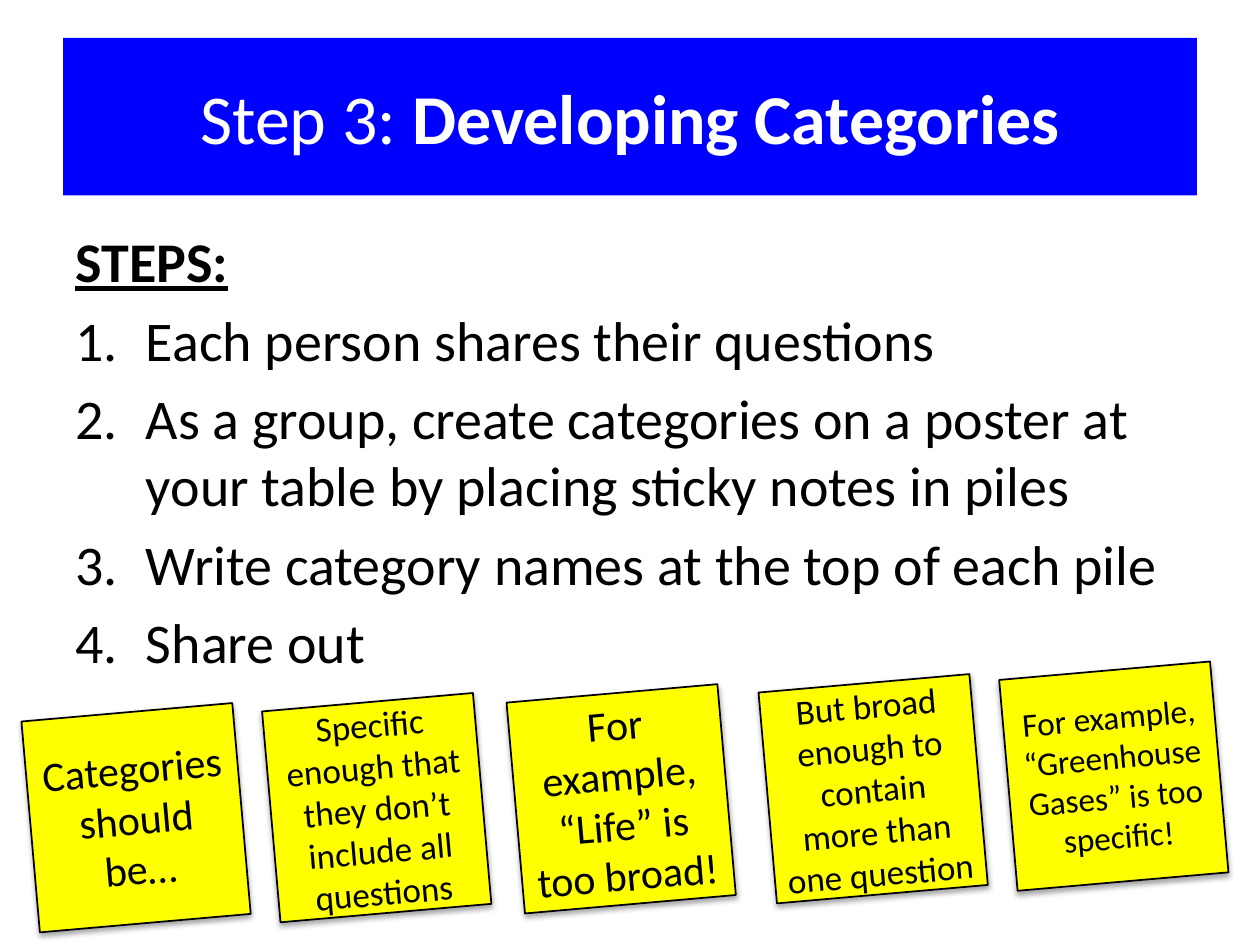
import pptx
import pptx.dml.color
import pptx.enum.shapes
import pptx.enum.text
import pptx.oxml
import pptx.oxml.ns
import pptx.util

SLIDE_WIDTH, SLIDE_HEIGHT = 10, 7.5
COLUMNS, ROWS = 100, 75
NOTE_SIDE = 16.8
INDENT = pptx.util.Inches(0.56)

STEPS = [
    "Each person shares their questions",
    "As a group, create categories on a poster at your table by placing sticky notes in piles",
    "Write category names at the top of each pile",
    "Share out",
]

# Column, row, font size and text of each sticky note
NOTES = [
    (2.4, 56.5, 24, "Categories should be…"),
    (21.5, 55.7, 20, "Specific enough that they don’t include all questions"),
    (40.9, 55, 24, "For example, “Life” is too broad!"),
    (60.9, 54.2, 20, "But broad enough to contain more than one question"),
    (80, 53.2, 19, "For example, “Greenhouse Gases” is too specific!"),
]


def color(hex_value):
    return pptx.dml.color.RGBColor.from_string(hex_value)


def apply(target, values):
    for name, value in values.items():
        setattr(target, name, value)


class SlideBuilder:
    font_name = "Calibri"
    ink = "000000"
    paper = "FFFFFF"
    banner = "0000FF"
    sticky = "FFFF00"

    def __init__(self, presentation):
        self.slide = presentation.slides.add_slide(presentation.slide_layouts[5])

    def box(self, column, row, width, height):
        across = pptx.util.Inches(SLIDE_WIDTH / COLUMNS)
        down = pptx.util.Inches(SLIDE_HEIGHT / ROWS)
        return (round(column * across), round(row * down),
                round(width * across), round(height * down))

    def fill(self, shape, hex_value):
        shape.fill.solid()
        shape.fill.fore_color.rgb = color(hex_value)

    def add_text(self, paragraph, text, size, hex_value, **formats):
        run = paragraph.add_run()
        run.text = text
        apply(run.font, {"name": self.font_name, "size": pptx.util.Pt(size), **formats})
        run.font.color.rgb = color(hex_value)

    def frame(self, shape, anchor):
        apply(shape.text_frame, {
            "word_wrap": True,
            "auto_size": pptx.enum.text.MSO_AUTO_SIZE.NONE,
            "vertical_anchor": anchor,
        })
        return shape.text_frame

    def title(self, grid_box, parts):
        shape = self.slide.shapes.title
        apply(shape, dict(zip(("left", "top", "width", "height"), self.box(*grid_box))))
        self.fill(shape, self.banner)
        paragraph = self.frame(shape, pptx.enum.text.MSO_ANCHOR.MIDDLE).paragraphs[0]
        paragraph.alignment = pptx.enum.text.PP_ALIGN.CENTER
        for text, bold in parts:
            self.add_text(paragraph, text, 40, self.paper, bold=bold)

    def numbered_list(self, grid_box, heading, items):
        shape = self.slide.shapes.add_textbox(*self.box(*grid_box))
        text_frame = self.frame(shape, pptx.enum.text.MSO_ANCHOR.TOP)
        self.add_text(text_frame.paragraphs[0], heading, 32, self.ink, bold=True, underline=True)
        for item in items:
            self.add_text(text_frame.add_paragraph(), item, 32, self.ink)
        for index, paragraph in enumerate(text_frame.paragraphs):
            paragraph.space_before = pptx.util.Pt(6.4)
            properties = paragraph._p.get_or_add_pPr()
            properties.set("marL", str(INDENT))
            properties.set("indent", str(-INDENT))
            if index:
                numbering = pptx.oxml.parse_xml(
                    f'<a:buAutoNum {pptx.oxml.ns.nsdecls("a")} type="arabicPeriod"/>')
                properties.append(numbering)

    def sticky_note(self, column, row, size, text):
        shape = self.slide.shapes.add_shape(
            pptx.enum.shapes.MSO_SHAPE.RECTANGLE,
            *self.box(column, row, NOTE_SIDE, NOTE_SIDE))
        shape.rotation = 355
        self.fill(shape, self.sticky)
        shape.line.color.rgb = color(self.ink)
        shape.line.width = pptx.util.Pt(1)
        self.soft_shadow(shape)
        paragraph = self.frame(shape, pptx.enum.text.MSO_ANCHOR.MIDDLE).paragraphs[0]
        paragraph.alignment = pptx.enum.text.PP_ALIGN.CENTER
        self.add_text(paragraph, text, size, self.ink)

    def soft_shadow(self, shape):
        shape.shadow.inherit = False
        effects = shape._element.spPr.find(pptx.oxml.ns.qn("a:effectLst"))
        effects.append(pptx.oxml.parse_xml(
            f'<a:outerShdw {pptx.oxml.ns.nsdecls("a")} blurRad="{pptx.util.Pt(3.1)}" '
            f'dist="{pptx.util.Pt(1.8)}" dir="5400000" rotWithShape="0">'
            f'<a:srgbClr val="{self.ink}"><a:alpha val="35000"/></a:srgbClr></a:outerShdw>'))


def main():
    presentation = pptx.Presentation()
    apply(presentation, {
        "slide_width": pptx.util.Inches(SLIDE_WIDTH),
        "slide_height": pptx.util.Inches(SLIDE_HEIGHT),
    })
    builder = SlideBuilder(presentation)

    # Title banner
    builder.title((5, 3, 90, 12.5), [("Step 3: ", False), ("Developing Categories", True)])

    # Numbered steps
    builder.numbered_list((5, 17.5, 90, 40), "STEPS:", STEPS)

    # Row of tilted sticky notes
    for note in NOTES:
        builder.sticky_note(*note)

    presentation.save("out.pptx")


if __name__ == "__main__":
    main()
